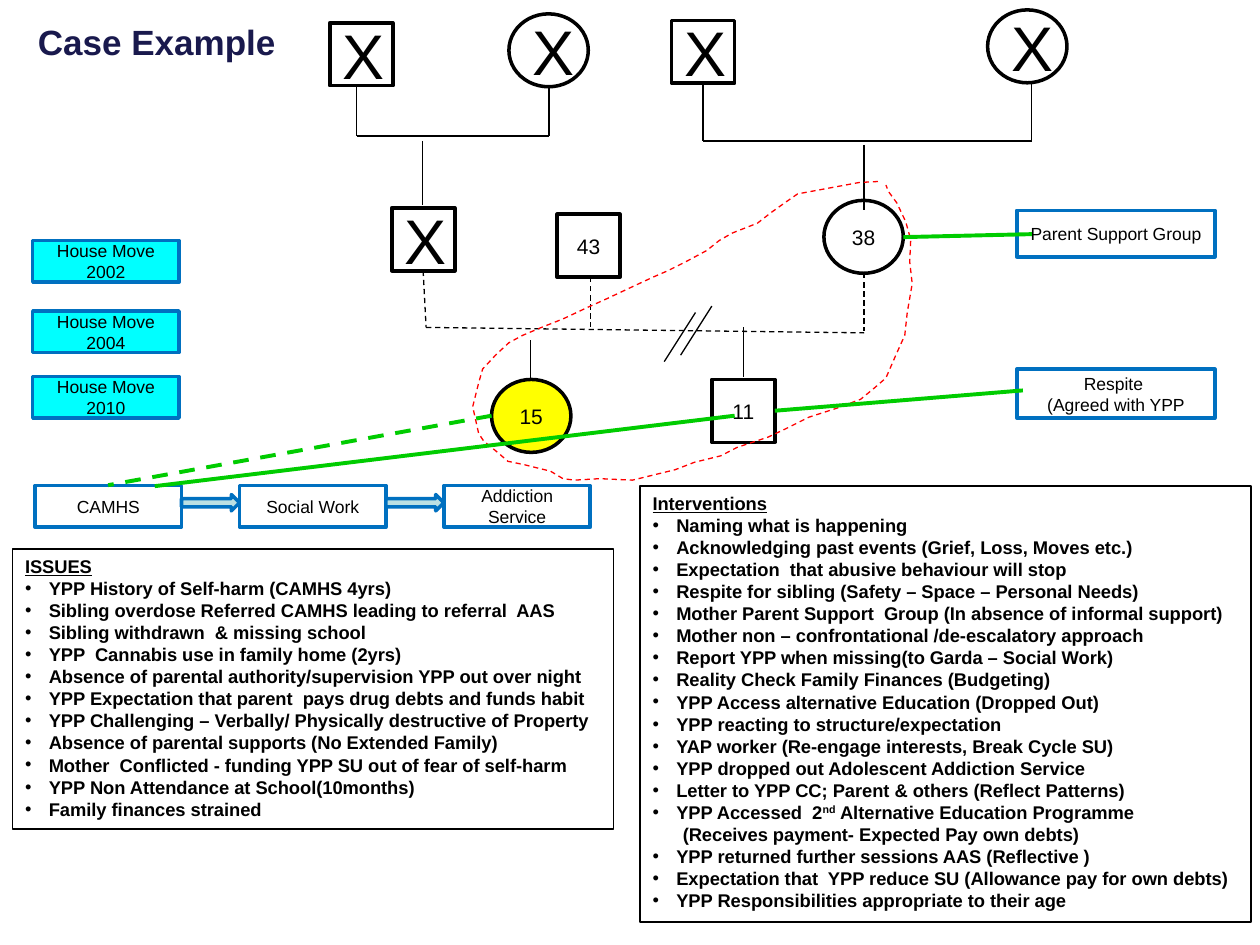
from dataclasses import dataclass

from lxml import etree
from pptx import Presentation
from pptx.dml.color import RGBColor
from pptx.enum.dml import MSO_LINE
from pptx.enum.shapes import MSO_CONNECTOR, MSO_SHAPE
from pptx.enum.text import MSO_ANCHOR, MSO_AUTO_SIZE, PP_ALIGN
from pptx.oxml.ns import qn
from pptx.util import Cm, Pt

RECTANGLE = MSO_SHAPE.RECTANGLE
ELLIPSE = MSO_SHAPE.OVAL
ARROW = MSO_SHAPE.RIGHT_ARROW
STRAIGHT = MSO_CONNECTOR.STRAIGHT
DASH = MSO_LINE.DASH
CENTER = PP_ALIGN.CENTER
LEFT = PP_ALIGN.LEFT
MIDDLE = MSO_ANCHOR.MIDDLE
TOP = MSO_ANCHOR.TOP
FIXED = MSO_AUTO_SIZE.NONE


@dataclass(frozen=True)
class Theme:
    font: str = "Arial"
    ink: str = "000000"
    title: str = "19194D"
    index_person: str = "FFFF00"
    boundary: str = "FF0000"
    event: str = "00FFFF"
    frame: str = "0070C0"
    arrow: str = "BBE0E3"
    link: str = "00CC00"
    title_size: float = 20
    deceased_size: float = 36
    age_size: float = 12
    box_size: float = 10
    list_size: float = 10.5
    thin: float = 0.75
    medium: float = 2
    thick: float = 2.25


@dataclass(frozen=True)
class Box:
    left: float
    top: float
    width: float
    height: float

    def inner(self, x, y, width, height):
        return Box(self.left + x, self.top + y, width, height)

    def lengths(self):
        return Cm(self.left), Cm(self.top), Cm(self.width), Cm(self.height)


THEME = Theme()

ISSUES = [
    "YPP History of Self-harm (CAMHS 4yrs)",
    "Sibling overdose Referred CAMHS leading to referral  AAS",
    "Sibling withdrawn  & missing school",
    "YPP  Cannabis use in family home (2yrs)",
    "Absence of parental authority/supervision YPP out over night",
    "YPP Expectation that parent  pays drug debts and funds habit",
    "YPP Challenging – Verbally/ Physically destructive of Property",
    "Absence of parental supports (No Extended Family)",
    "Mother  Conflicted - funding YPP SU out of fear of self-harm",
    "YPP Non Attendance at School(10months)",
    "Family finances strained",
]
CONTINUATION = "(Receives payment- Expected Pay own debts)"
INTERVENTIONS = [
    "Naming what is happening",
    "Acknowledging past events (Grief, Loss, Moves etc.)",
    "Expectation  that abusive behaviour will stop",
    "Respite for sibling (Safety – Space – Personal Needs)",
    "Mother Parent Support  Group (In absence of informal support)",
    "Mother non – confrontational /de-escalatory approach",
    "Report YPP when missing(to Garda – Social Work)",
    "Reality Check Family Finances (Budgeting)",
    "YPP Access alternative Education (Dropped Out)",
    "YPP reacting to structure/expectation",
    "YAP worker (Re-engage interests, Break Cycle SU)",
    "YPP dropped out Adolescent Addiction Service",
    "Letter to YPP CC; Parent & others (Reflect Patterns)",
    ("YPP Accessed  2", "nd", " Alternative Education Programme"),
    CONTINUATION,
    "YPP returned further sessions AAS (Reflective )",
    "Expectation that  YPP reduce SU (Allowance pay for own debts)",
    "YPP Responsibilities appropriate to their age",
]
PEOPLE = [
    (RECTANGLE, 0.65, 0.46, "X"), (ELLIPSE, 4.26, 0.28, "X"),
    (RECTANGLE, 7.54, 0.41, "X"), (ELLIPSE, 13.91, 0.2, "X"),
    (RECTANGLE, 1.9, 4.19, "X"), (RECTANGLE, 5.23, 4.32, "43"),
    (ELLIPSE, 10.61, 4.04, "38"), (ELLIPSE, 3.91, 7.65, "15"),
    (RECTANGLE, 8.35, 7.65, "11"),
]
COUPLES = [(1.19, 1.7, 5.07, 1.75, 2.74), (8.17, 1.68, 14.8, 1.68, 2.84)]
DESCENTS = [(2.51, 2.84, 4.14), (11.42, 2.92, 4.24), (4.69, 6.86, 7.65), (8.99, 6.6, 7.59)]
PARTNERSHIPS = [
    (2.53, 5.46, 2.59, 6.6), (11.42, 5.51, 11.42, 6.68),
    (2.59, 6.6, 11.42, 6.71), (5.91, 5.59, 5.91, 6.6),
]
HOUSEHOLD = [
    (11.7, 3.66), (11.32, 3.68), (10.08, 3.91), (9.82, 4.09), (9.54, 4.29), (9.27, 4.5),
    (8.76, 4.7), (8.5, 4.85), (8.25, 5.05), (7.82, 5.28), (7.46, 5.46), (7.16, 5.59),
    (6.73, 5.79), (6.24, 6.02), (5.84, 6.2), (5.35, 6.43), (4.92, 6.6), (4.54, 6.76),
    (4.26, 6.91), (4.01, 7.14), (3.73, 7.44), (3.65, 7.72), (3.53, 8.2), (3.65, 8.74),
    (3.75, 8.89), (4.03, 9.12), (4.24, 9.3), (4.57, 9.37), (5.1, 9.5), (5.35, 9.65),
    (5.58, 9.68), (6.09, 9.65), (6.75, 9.68), (7.61, 9.47), (8, 9.32), (8.53, 9.19),
    (8.86, 9.02), (9.49, 8.81), (9.85, 8.64), (10.31, 8.41), (10.87, 8.23), (11.35, 8.05),
    (11.63, 7.82), (11.86, 7.62), (12.06, 7.16), (12.24, 6.76), (12.29, 6.3), (12.39, 5.72),
    (12.34, 5.28), (12.36, 4.83), (12.26, 4.47), (12.08, 4.09), (11.91, 3.86), (11.86, 3.73),
]


def color(value):
    return RGBColor.from_string(value)


def style_line(line, line_color, width, dash=None):
    line.color.rgb = color(line_color)
    line.width = Pt(width)
    if dash:
        line.dash_style = dash


def style_font(font, size, font_color=THEME.ink, bold=False):
    font.name, font.size, font.bold = THEME.font, Pt(size), bold
    font.color.rgb = color(font_color)


def place(shape, box):
    shape.left, shape.top, shape.width, shape.height = box.lengths()


def add_box(slide, kind, box, text="", size=THEME.box_size, line=THEME.frame, fill=None):
    shape = slide.shapes.add_shape(kind, *box.lengths())
    shape.shadow.inherit = False
    if fill:
        shape.fill.solid()
        shape.fill.fore_color.rgb = color(fill)
    else:
        shape.fill.background()
    style_line(shape.line, line, THEME.medium)
    shape.text_frame.text = text
    shape.text_frame.vertical_anchor = MIDDLE
    for paragraph in shape.text_frame.paragraphs:
        paragraph.alignment = CENTER
        style_font(paragraph.font, size)


def add_line(slide, box, points, line_color=THEME.ink, width=THEME.thin, dash=None):
    x1, y1, x2, y2 = points
    connector = slide.shapes.add_connector(
        STRAIGHT, Cm(box.left + x1), Cm(box.top + y1), Cm(box.left + x2), Cm(box.top + y2))
    style_line(connector.line, line_color, width, dash)
    etree.SubElement(connector._element.spPr, qn("a:effectLst"))


def add_title(slide, box):
    title = slide.shapes.title
    place(title, box)
    frame = title.text_frame
    frame.text = "Case Example"
    frame.word_wrap, frame.auto_size, frame.vertical_anchor = True, FIXED, TOP
    frame.paragraphs[0].alignment = LEFT
    style_font(frame.paragraphs[0].font, THEME.title_size, THEME.title, bold=True)


def add_household(slide, box):
    points = [(Cm(box.left + x), Cm(box.top + y)) for x, y in HOUSEHOLD]
    builder = slide.shapes.build_freeform(*points[0])
    builder.add_line_segments(points[1:], close=False)
    boundary = builder.convert_to_shape()
    boundary.shadow.inherit = False
    boundary.fill.background()
    style_line(boundary.line, THEME.boundary, THEME.thin, DASH)


def add_genogram(slide, box):
    for x1, y1, x2, y2, bar in COUPLES:
        for points in ((x1, y1, x1, bar), (x2, y2, x2, bar), (x1, bar, x2, bar)):
            add_line(slide, box, points)
    for x, start, end in DESCENTS:
        add_line(slide, box, (x, start, x, end))
    for points in PARTNERSHIPS:
        add_line(slide, box, points, dash=DASH)
    for x, y in ((8.02, 6.3), (8.35, 6.17)):
        add_line(slide, box, (x, y, x - 0.63, y + 0.99))
    for kind, x, y, label in PEOPLE:
        width, height = (1.27, 1.27) if kind == RECTANGLE else (1.6, 1.47)
        size = THEME.deceased_size if label == "X" else THEME.age_size
        fill = THEME.index_person if label == "15" else None
        add_box(slide, kind, box.inner(x, y, width, height), label, size, THEME.ink, fill)
    add_household(slide, box)


def add_house_moves(slide, box):
    for year, y in ((2002, 0), (2004, 1.42), (2010, 2.74)):
        add_box(slide, RECTANGLE, box.inner(0, y, box.width, 0.84),
                f"House Move\n{year}", fill=THEME.event)


def add_services(slide, box):
    names = ["CAMHS", "Social Work", "Addiction Service"]
    width = 2.95
    step = (box.width - width) / (len(names) - 1)
    for index, name in enumerate(names):
        add_box(slide, RECTANGLE, box.inner(index * step, 0, width, box.height), name)
        if index:
            arrow = box.inner((index - 1) * step + width, 0.18, step - width, 0.33)
            add_box(slide, ARROW, arrow, fill=THEME.arrow)


def add_supports(slide, box):
    for y, height, text in ((0, 0.94, "Parent Support Group"),
                            (3.2, 0.99, "Respite \n(Agreed with YPP")):
        add_box(slide, RECTANGLE, box.inner(0, y, box.width, height), text)


def add_care_links(slide, box):
    for points, dash in (((9.91, 8.38, 2.18, 9.78), DASH), ((14.81, 8.38, 3.12, 9.8), None),
                         ((20.62, 7.87, 15.62, 8.28), None), ((20.8, 4.72, 18.21, 4.78), None)):
        add_line(slide, box, points, THEME.link, THEME.thick, dash)


def set_bullet(paragraph, margin, indent, bullet):
    properties = paragraph._p.get_or_add_pPr()
    properties.set("marL", str(Cm(margin)))
    properties.set("indent", str(Cm(indent)))
    if bullet:
        etree.SubElement(properties, qn("a:buFont")).set("typeface", THEME.font)
        etree.SubElement(properties, qn("a:buChar")).set("char", "•")
    else:
        etree.SubElement(properties, qn("a:buNone"))


def add_list_panel(placeholder, box, heading, items):
    place(placeholder, box)
    style_line(placeholder.line, THEME.ink, THEME.thin)
    frame = placeholder.text_frame
    frame.word_wrap, frame.auto_size, frame.vertical_anchor = True, FIXED, TOP
    for index, item in enumerate([heading, *items]):
        paragraph = frame.paragraphs[0] if index == 0 else frame.add_paragraph()
        for position, text in enumerate((item,) if isinstance(item, str) else item):
            run = paragraph.add_run()
            run.text = text
            if position == 1:
                run._r.get_or_add_rPr().set("baseline", "30000")
        paragraph.space_before = Pt(0)
        if index == 0:
            set_bullet(paragraph, 0, 0, False)
        elif item == CONTINUATION:
            set_bullet(paragraph, 0.61, 0, False)
        else:
            set_bullet(paragraph, 0.48, -0.48, True)
        style_font(paragraph.font, THEME.list_size, bold=True)
        paragraph.font.underline = index == 0


def main():
    presentation = Presentation()
    presentation.slide_width, presentation.slide_height = Cm(25.4), Cm(19.05)
    slide = presentation.slides.add_slide(presentation.slide_layouts[3])
    add_title(slide, Box(0.51, 0.28, 5.5, 1.12))
    add_genogram(slide, Box(6, 0, 15.6, 9.7))
    add_house_moves(slide, Box(0.66, 4.85, 2.95, 3.58))
    add_services(slide, Box(0.71, 9.79, 11.19, 0.84))
    add_supports(slide, Box(20.5, 4.24, 3.99, 4.19))
    add_care_links(slide, Box(0, 0, 25.4, 19.05))
    add_list_panel(slide.placeholders[1], Box(0.25, 11.07, 12.12, 5.64), "ISSUES", ISSUES)
    add_list_panel(slide.placeholders[2], Box(12.9, 9.8, 12.32, 8.79),
                   "Interventions", INTERVENTIONS)
    presentation.save("out.pptx")


if __name__ == "__main__":
    main()
